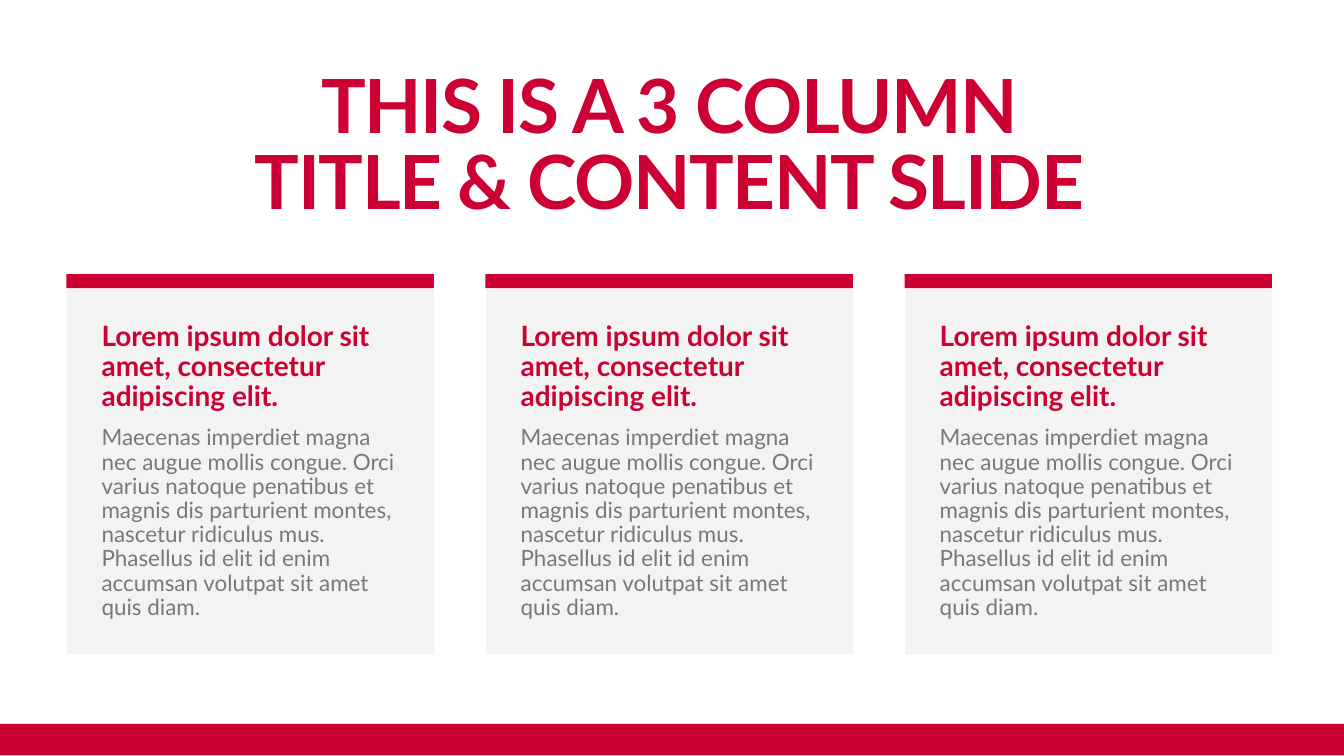
from lxml.etree import SubElement
from pptx import Presentation
from pptx.dml.color import RGBColor
from pptx.enum.shapes import MSO_SHAPE
from pptx.enum.text import MSO_ANCHOR, PP_ALIGN
from pptx.oxml.ns import qn
from pptx.util import Cm, Pt

HUES = {"red": "CC0033", "dark": "181818", "gray": "797979"}
HEAD = "Lorem ipsum dolor sit amet, consectetur adipiscing elit."
BODY = (
    "Maecenas imperdiet magna nec augue mollis congue. Orci varius natoque "
    "penatibus et magnis dis parturient montes, nascetur ridiculus mus. "
    "Phasellus id elit id enim accumsan volutpat sit amet quis diam."
)

deck = Presentation()
deck.slide_width, deck.slide_height = Cm(50.8), Cm(28.58)
slide = deck.slides.add_slide(deck.slide_layouts[6])


def add_box(left, top, width, height, hue):
    box = slide.shapes.add_shape(
        MSO_SHAPE.RECTANGLE, Cm(left), Cm(top), Cm(width), Cm(height))
    box.shadow.inherit = False
    box.fill.solid()
    box.fill.fore_color.rgb = RGBColor.from_string(HUES[hue])
    box.line.fill.background()
    return box


def set_font(para, size, hue, bold):
    font = para.font
    font.name, font.size, font.bold = "Lato", Pt(size), bold
    font.color.rgb = RGBColor.from_string(HUES[hue])


# Footer band
add_box(0, 27.37, 50.8, 1.19, "red")

# Title
title = slide.shapes.add_textbox(Cm(2.54), Cm(2.59), Cm(45.54), Cm(7.72))
frame = title.text_frame
frame.word_wrap = True
frame.margin_left = frame.margin_right = 0
para = frame.paragraphs[0]
para.text = "THIS IS A 3 COLUMN\vTITLE & CONTENT SLIDE"
para.alignment = PP_ALIGN.CENTER
para.line_spacing = Pt(82)
set_font(para, 80, "red", True)
for run in para.runs:
    run.font._element.set("spc", "-150")

# Three cards, each under a red bar
for col in range(3):
    left = 2.54 + col * 15.84
    add_box(left - 0.03, 10.36, 13.89, 0.53, "red")
    card = add_box(left, 10.9, 13.87, 13.84, "dark")
    tint = card.fill._xPr.find(".//" + qn("a:srgbClr"))
    SubElement(tint, qn("a:alpha"), val="5000")

    frame = card.text_frame
    frame.word_wrap = True
    frame.vertical_anchor = MSO_ANCHOR.TOP
    frame.margin_left = Cm(1.3)
    frame.margin_top = frame.margin_right = frame.margin_bottom = Cm(1.27)
    frame.text = f"{HEAD}\n{BODY}"
    head, body = frame.paragraphs
    for para in (head, body):
        para.alignment = PP_ALIGN.LEFT
        para.line_spacing = 0.9
    set_font(head, 30, "red", True)
    set_font(body, 24, "gray", False)
    body.space_before = Pt(15)

deck.save("out.pptx")
